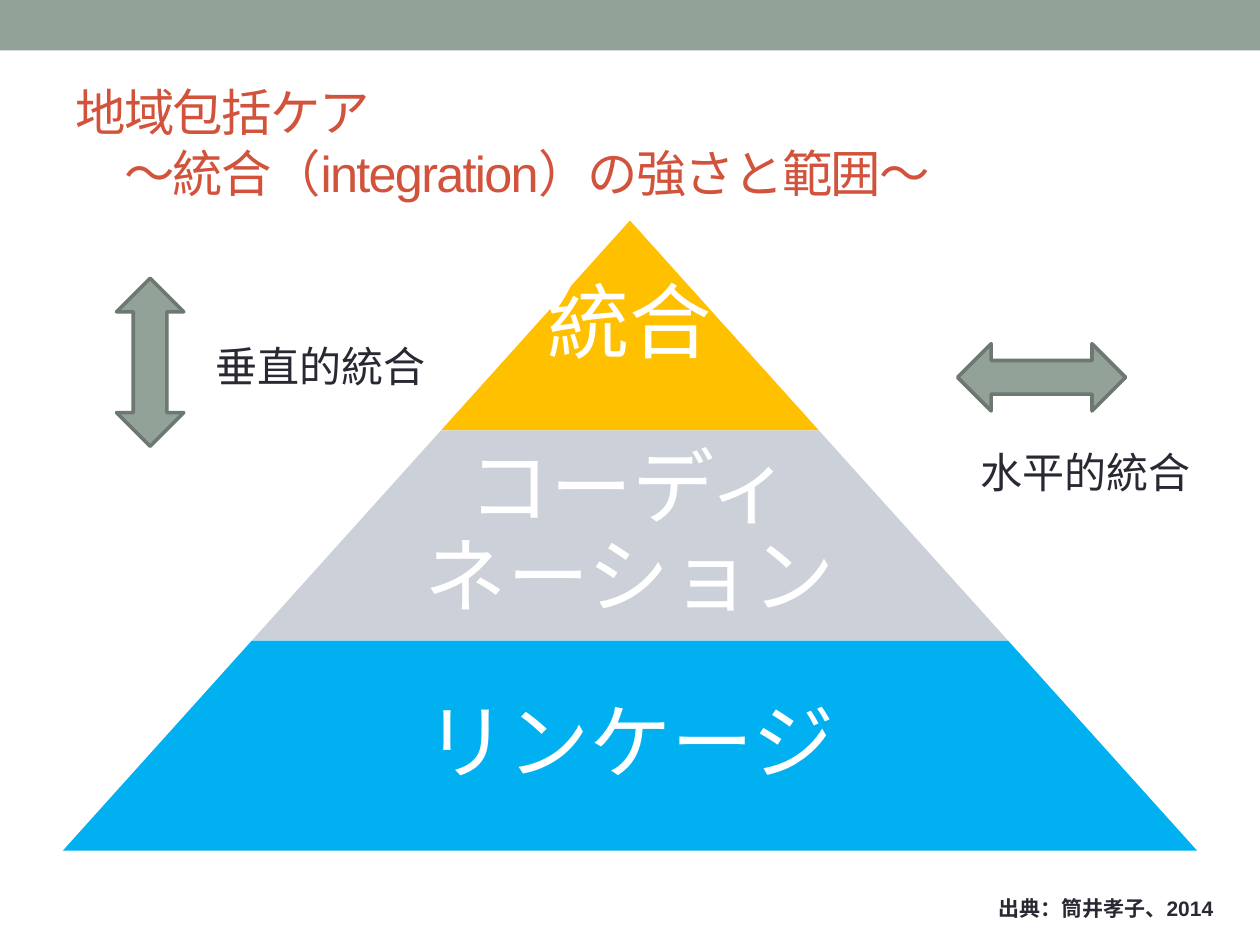
import pptx
import pptx.util
from pptx.dml.color import RGBColor
from pptx.enum.shapes import MSO_SHAPE
from pptx.enum.text import MSO_ANCHOR, MSO_AUTO_SIZE, PP_ALIGN

Pt = pptx.util.Pt
COLORS = {
    "sage": "93A299", "sage_dark": "6D7871", "title": "D2533C", "ink": "292934",
    "gold": "FFC000", "grey": "CCD1D9", "blue": "00B0F0", "white": "FFFFFF",
}

deck = pptx.Presentation()
deck.slide_width, deck.slide_height = Pt(720), Pt(540)
page = deck.slides.add_slide(deck.slide_layouts[5])


def add_span(para, text, size, color, bold=False):
    span = para.add_run()
    span.text = text
    span.font.name = "Arial"
    span.font.size = Pt(size)
    span.font.bold = bold
    span.font.color.rgb = RGBColor.from_string(COLORS[color])
    return span


def add_filled(kind, left, top, width, height, color, line=None):
    shape = page.shapes.add_shape(kind, Pt(left), Pt(top), Pt(width), Pt(height))
    shape.shadow.inherit = False
    shape.fill.solid()
    shape.fill.fore_color.rgb = RGBColor.from_string(COLORS[color])
    if line:
        shape.line.color.rgb = RGBColor.from_string(COLORS[line])
        shape.line.width = Pt(2.08)
    else:
        shape.line.fill.background()
    return shape


# Top band
add_filled(MSO_SHAPE.RECTANGLE, 0, 0, 720, 28.8, "sage")

# Title
title = page.shapes.title
title.left, title.top, title.width, title.height = Pt(36), Pt(42), Pt(648), Pt(78)
title.text_frame.auto_size = MSO_AUTO_SIZE.NONE
title.text_frame.vertical_anchor = MSO_ANCHOR.MIDDLE
para = title.text_frame.paragraphs[0]
para.alignment = PP_ALIGN.LEFT
for number, text in enumerate(["地域包括ケア", "　～統合（integration）の強さと範囲～"]):
    if number:
        para.add_line_break()
    span = add_span(para, text, 28.8, "title")
    span.font._element.set("spc", "-100")

# Pyramid: each tier is one step wider than the tier above
TIER_HEIGHT, TIER_STEP = 120, 216
tiers = [("統合", "gold", 1), ("コーディネーション", "grey", 0.65), ("リンケージ", "blue", 0.65)]
for level, (text, color, text_share) in enumerate(tiers):
    top, width = 126 + level * TIER_HEIGHT, (level + 1) * TIER_STEP
    tier = add_filled(MSO_SHAPE.TRAPEZOID, 360 - width / 2, top, width, TIER_HEIGHT, color)
    tier.adjustments[0] = TIER_STEP / 2 / TIER_HEIGHT
    text_width = width * text_share
    box = page.shapes.add_textbox(
        Pt(360 - text_width / 2), Pt(top), Pt(text_width), Pt(TIER_HEIGHT))
    frame = box.text_frame
    frame.word_wrap = True
    frame.vertical_anchor = MSO_ANCHOR.MIDDLE
    frame.margin_left = frame.margin_right = frame.margin_top = frame.margin_bottom = Pt(5)
    para = frame.paragraphs[0]
    para.alignment = PP_ALIGN.CENTER
    para.line_spacing = 0.9
    add_span(para, text, 47, "white")

# Arrows for the two directions of integration
add_filled(MSO_SHAPE.UP_DOWN_ARROW, 66.6, 159, 38.4, 96, "sage", "sage_dark")
add_filled(MSO_SHAPE.LEFT_RIGHT_ARROW, 547.2, 196.4, 96, 38.4, "sage", "sage_dark")

# Arrow labels and citation
labels = [
    ("垂直的統合", 116, 191, 148, 36, 24, False),
    ("水平的統合", 553, 251.5, 136, 36, 24, False),
    ("出典：筒井孝子、2014", 563.5, 508, 156, 22, 12, True),
]
for text, left, top, width, height, size, bold in labels:
    box = page.shapes.add_textbox(Pt(left), Pt(top), Pt(width), Pt(height))
    box.text_frame.word_wrap = True
    add_span(box.text_frame.paragraphs[0], text, size, "ink", bold)

deck.save("out.pptx")
